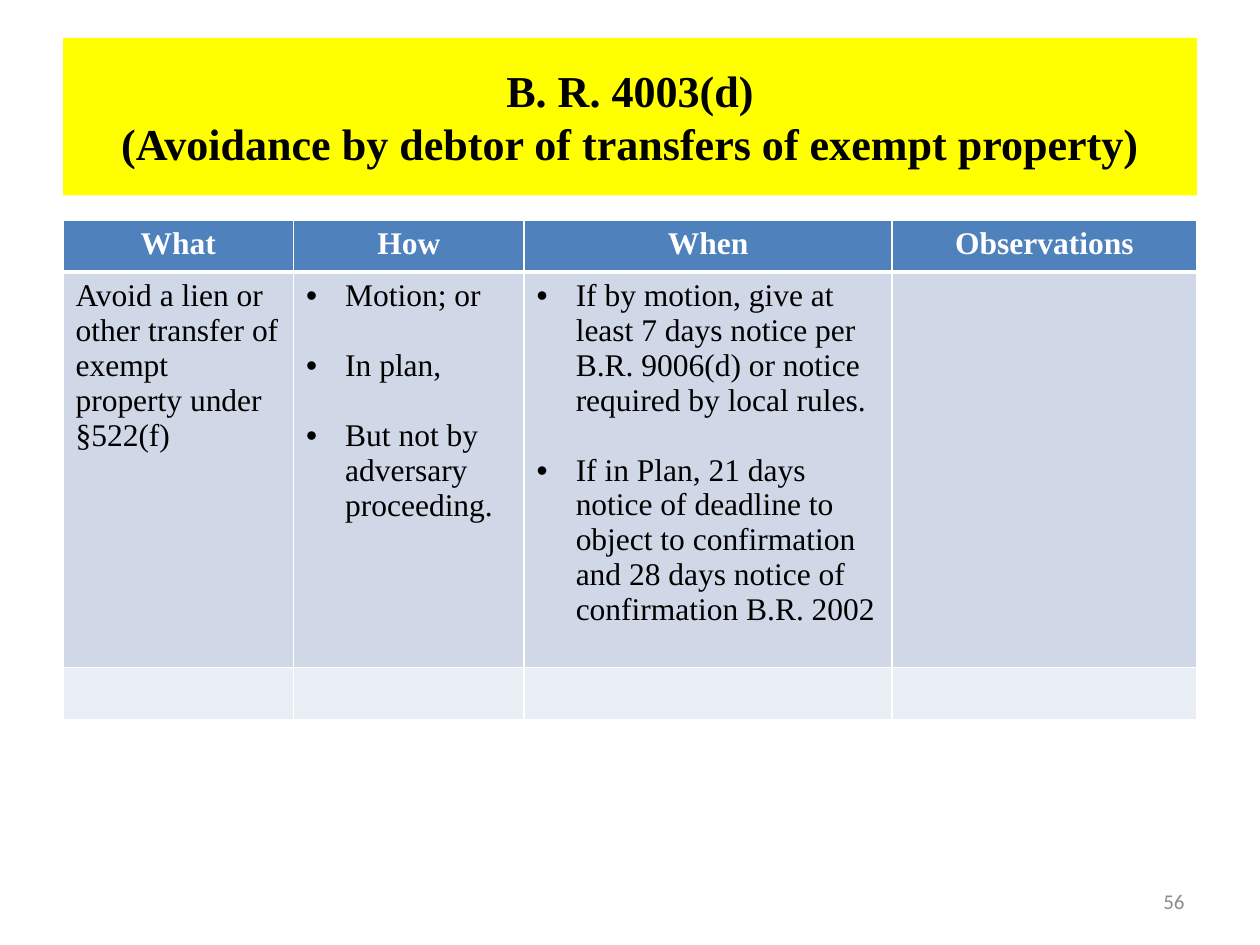
"""Build the B. R. 4003(d) slide: a title band above a table of procedures."""
import pptx
import pptx.dml.color
import pptx.enum.text
import pptx.oxml
import pptx.oxml.ns
import pptx.util

Inches, Pt = pptx.util.Inches, pptx.util.Pt
RGBColor = pptx.dml.color.RGBColor
ALIGN = pptx.enum.text.PP_ALIGN
ANCHOR = pptx.enum.text.MSO_ANCHOR

YELLOW = RGBColor(0xFF, 0xFF, 0x00)
BLACK = RGBColor(0x00, 0x00, 0x00)
WHITE = RGBColor(0xFF, 0xFF, 0xFF)
GRAY = RGBColor(0x8C, 0x8C, 0x8C)
BLUE = RGBColor(0x4F, 0x81, 0xBD)
PALE_BLUE = RGBColor(0xD0, 0xD8, 0xE8)
PALEST_BLUE = RGBColor(0xE9, 0xED, 0xF4)

HEADING = "B. R. 4003(d)\v(Avoidance by debtor of transfers of exempt property)"
PAGE = "56"
ROWS = [
    [["What"], ["How"], ["When"], ["Observations"]],
    [
        ["Avoid a lien or other transfer of exempt property under §522(f)"],
        ["Motion; or", "In plan,", "But not by adversary proceeding."],
        [
            "If by motion, give at least 7 days notice per B.R. 9006(d) "
            "or notice required by local rules.",
            "If in Plan, 21 days notice of deadline to object to confirmation "
            "and 28 days notice of confirmation B.R. 2002",
        ],
        [],
    ],
    [[], [], [], []],
]
COLUMN_WIDTHS = [1.83, 1.83, 2.92, 2.42]
ROW_HEIGHTS = [0.41, 3.14, 0.41]
ROW_FILLS = [BLUE, PALE_BLUE, PALEST_BLUE]
LEFT, WIDTH = 0.5, 9

HEADING_FONT = {"name": "Times New Roman", "size": Pt(25.2), "bold": True}
HEADER_FONT = {"name": "Times New Roman", "size": Pt(18), "bold": True}
BODY_FONT = {"name": "Times New Roman", "size": Pt(18), "bold": False}
PAGE_FONT = {"name": "Calibri", "size": Pt(12)}


def format_paragraph(paragraph, font, color, alignment):
    paragraph.alignment = alignment
    for run in paragraph.runs:
        for attribute, value in font.items():
            setattr(run.font, attribute, value)
        run.font.color.rgb = color


def add_bullet(paragraph):
    properties = paragraph._p.get_or_add_pPr()
    properties.set("marL", str(Inches(0.31)))
    properties.set("indent", str(-Inches(0.31)))
    namespace = pptx.oxml.ns.nsdecls("a")
    for tag in ('buFont typeface="Arial"', 'buChar char="•"'):
        properties.append(pptx.oxml.parse_xml(f"<a:{tag} {namespace}/>"))


def add_borders(cell, points):
    namespace = pptx.oxml.ns.nsdecls("a")
    for side, width in points.items():
        cell._tc.get_or_add_tcPr().append(pptx.oxml.parse_xml(
            f'<a:ln{side} {namespace} w="{Pt(width)}"><a:solidFill>'
            f'<a:srgbClr val="{WHITE}"/></a:solidFill></a:ln{side}>'))


def fill_cell(cell, items, row):
    header = row == 0
    add_borders(cell, {"L": 1, "R": 1, "T": 3 if row == 1 else 1, "B": 3 if header else 1})
    cell.fill.solid()
    cell.fill.fore_color.rgb = ROW_FILLS[row]
    cell.text = "\n".join(items)
    for paragraph in cell.text_frame.paragraphs:
        format_paragraph(paragraph, HEADER_FONT if header else BODY_FONT,
                         WHITE if header else BLACK,
                         ALIGN.CENTER if header else ALIGN.LEFT)
        if len(items) > 1:
            paragraph.space_after = Pt(20)
            add_bullet(paragraph)


def main():
    deck = pptx.Presentation()
    deck.slide_width, deck.slide_height = Inches(10), Inches(7.5)
    slide = deck.slides.add_slide(deck.slide_layouts[5])

    heading = slide.shapes.title
    heading.left, heading.top = Inches(LEFT), Inches(0.3)
    heading.width, heading.height = Inches(WIDTH), Inches(1.25)
    heading.fill.solid()
    heading.fill.fore_color.rgb = YELLOW
    heading.text_frame.text = HEADING
    heading.text_frame.auto_size = pptx.enum.text.MSO_AUTO_SIZE.NONE
    heading.text_frame.vertical_anchor = ANCHOR.MIDDLE
    format_paragraph(heading.text_frame.paragraphs[0], HEADING_FONT, BLACK, ALIGN.CENTER)

    procedures = slide.shapes.add_table(
        len(ROWS), len(COLUMN_WIDTHS), Inches(LEFT), Inches(1.75),
        Inches(WIDTH), Inches(sum(ROW_HEIGHTS))).table
    for column, width in zip(procedures.columns, COLUMN_WIDTHS):
        column.width = Inches(width)
    for row, (cells, height) in enumerate(zip(ROWS, ROW_HEIGHTS)):
        procedures.rows[row].height = Inches(height)
        for column, items in enumerate(cells):
            fill_cell(procedures.cell(row, column), items, row)

    page = slide.shapes.add_textbox(Inches(7.17), Inches(6.95), Inches(2.33), Inches(0.4))
    page.text_frame.word_wrap = True
    page.text_frame.vertical_anchor = ANCHOR.MIDDLE
    page.text_frame.text = PAGE
    format_paragraph(page.text_frame.paragraphs[0], PAGE_FONT, GRAY, ALIGN.RIGHT)

    deck.save("out.pptx")


if __name__ == "__main__":
    main()
